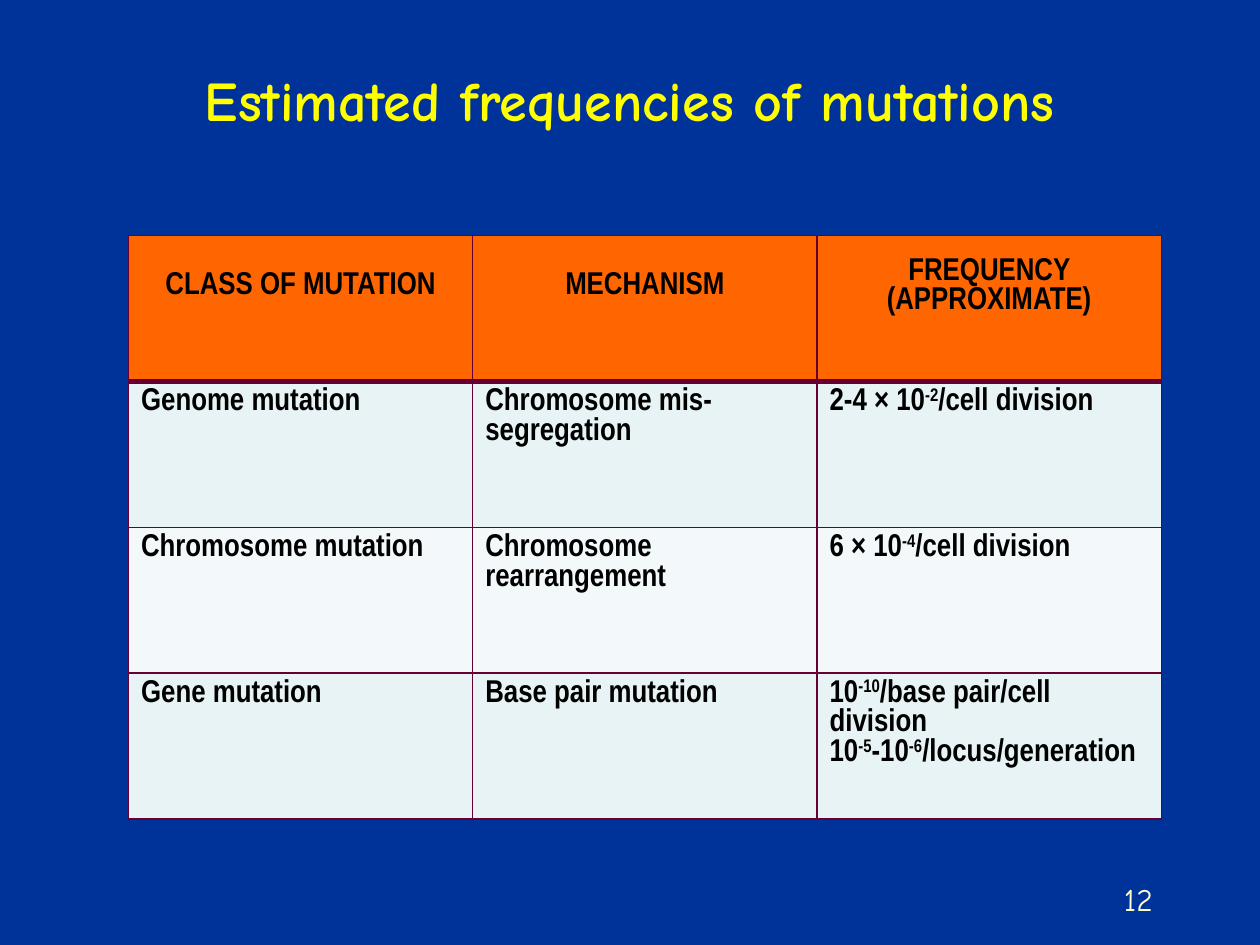
"""Build the slide on estimated frequencies of mutations."""
from lxml.etree import SubElement
from pptx import Presentation
from pptx.dml.color import RGBColor
from pptx.enum.text import MSO_ANCHOR as Anchor, PP_ALIGN as Align
from pptx.oxml.ns import qn
from pptx.util import Cm, Pt

NAVY = RGBColor(0x00, 0x33, 0x99)
YELLOW = RGBColor(0xFF, 0xFF, 0x00)
CREAM = RGBColor(0xFF, 0xFF, 0xCC)
BLACK = RGBColor(0x00, 0x00, 0x00)
ORANGE = RGBColor(0xFF, 0x66, 0x00)
PLUM = RGBColor(0x66, 0x00, 0x33)
MIST = RGBColor(0xE7, 0xF3, 0xF4)
ICE = RGBColor(0xF3, 0xF9, 0xFA)

ROWS = [
    ["CLASS OF MUTATION", "MECHANISM", "FREQUENCY (APPROXIMATE)"],
    ["Genome mutation", "Chromosome mis-segregation", "2-4 × 10^-2^/cell division"],
    ["Chromosome mutation", "Chromosome rearrangement", "6 × 10^-4^/cell division"],
    ["Gene mutation", "Base pair mutation",
     "10^-10^/base pair/cell division\n10^-5^-10^-6^/locus/generation"],
]


def write_text(frame, text, *, font, size, color, bold=False, align=Align.LEFT):
    """Fill a frame; each line is a paragraph and ^...^ marks a superscript."""
    for number, line in enumerate(text.split("\n")):
        para = frame.add_paragraph() if number else frame.paragraphs[0]
        para.alignment = align
        for position, part in enumerate(line.split("^")):
            span = para.add_run()
            span.text = part
            span.font.name = font
            span.font.size = Pt(size)
            span.font.bold = bold
            span.font.color.rgb = color
            if position % 2:
                span.font._element.set("baseline", "30000")


class SlideBuilder:
    """Hold the style and the current slide."""

    display_font = "Comic Neue"
    table_font = "Arial Narrow"

    def __init__(self, deck):
        self.page = deck.slides.add_slide(deck.slide_layouts[6])
        fill = self.page.background.fill
        fill.solid()
        fill.fore_color.rgb = NAVY

    def text(self, text, left, top, width, height, *, anchor=Anchor.TOP, **style):
        """Add a wrapped text box."""
        box = self.page.shapes.add_textbox(Cm(left), Cm(top), Cm(width), Cm(height))
        box.text_frame.word_wrap = True
        box.text_frame.vertical_anchor = anchor
        write_text(box.text_frame, text, font=self.display_font, **style)

    def border(self, cell, side, width):
        """Draw one side of a cell."""
        line = SubElement(cell._tc.get_or_add_tcPr(), qn(f"a:ln{side}"), w=str(Pt(width)))
        fill = SubElement(line, qn("a:solidFill"))
        SubElement(fill, qn("a:srgbClr"), val=str(PLUM))

    def table(self, rows, left, top, column_width, row_height):
        """Add a table with a header row and banded body rows."""
        count, columns = len(rows), len(rows[0])
        table = self.page.shapes.add_table(
            count, columns, Cm(left), Cm(top),
            Cm(column_width * columns), Cm(row_height * count)).table
        for column in table.columns:
            column.width = Cm(column_width)
        for index, values in enumerate(rows):
            table.rows[index].height = Cm(row_height)
            for column, text in enumerate(values):
                self.cell(table.cell(index, column), text, index)

    def cell(self, cell, text, row):
        """Format and fill one table cell."""
        header = row == 0
        widths = {"L": 1, "R": 1, "T": 3 if row == 1 else 1, "B": 3 if header else 1}
        for side, width in widths.items():
            self.border(cell, side, width)
        cell.fill.solid()
        cell.fill.fore_color.rgb = ORANGE if header else MIST if row % 2 else ICE
        cell.vertical_anchor = Anchor.MIDDLE if header else Anchor.TOP
        if header:
            cell.margin_bottom = Cm(1)
        write_text(cell.text_frame, text, font=self.table_font, size=18, color=BLACK,
                   bold=True, align=Align.CENTER if header else Align.LEFT)


def main():
    """Build and save the deck."""
    deck = Presentation()
    deck.slide_width, deck.slide_height = Cm(25.4), Cm(19.05)
    slide = SlideBuilder(deck)
    slide.text("12", 18.21, 17.35, 5.28, 1.27, anchor=Anchor.BOTTOM,
               size=18, color=CREAM, align=Align.RIGHT)
    slide.table(ROWS, 2.59, 4.75, 6.94, 2.94)
    slide.text("Estimated frequencies of mutations ", 0.41, 1.19, 24.99, 1.63,
               size=32, color=YELLOW, bold=True, align=Align.CENTER)
    deck.save("out.pptx")


if __name__ == "__main__":
    main()
